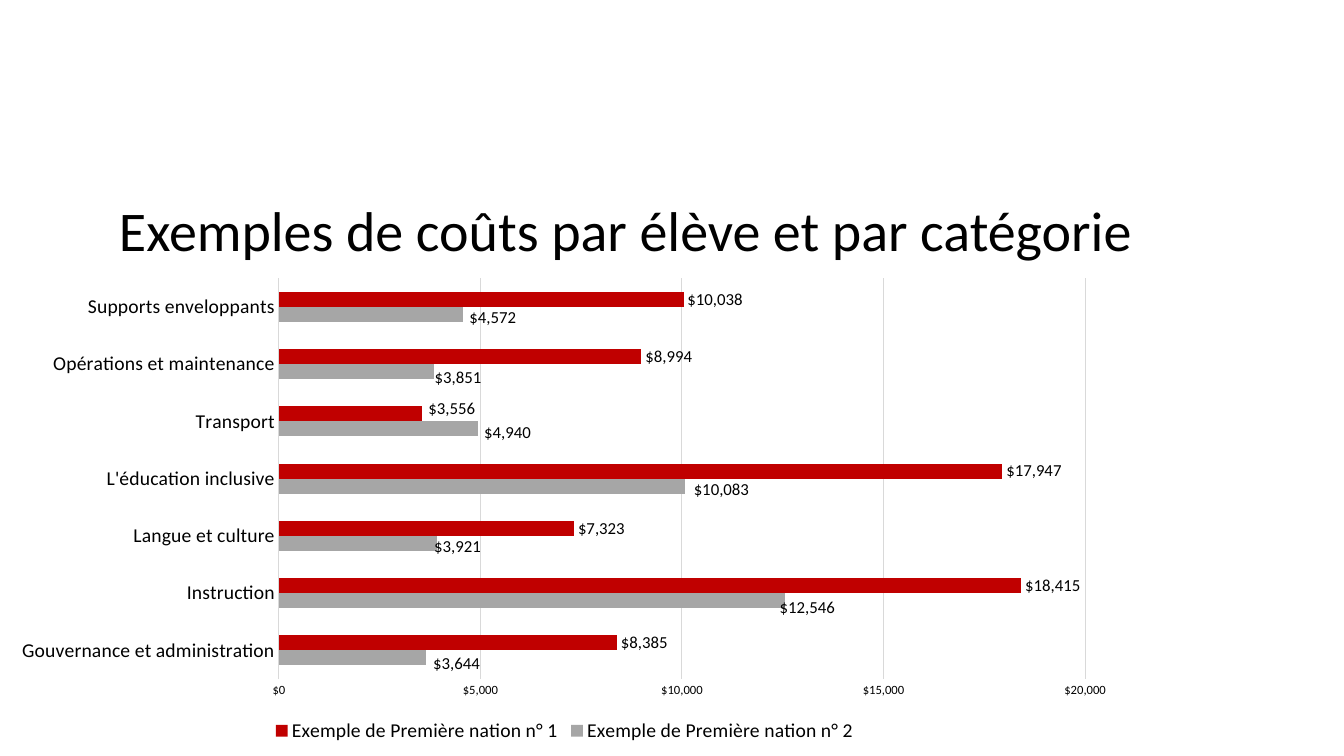
from lxml import etree
from pptx import Presentation
from pptx.chart.data import CategoryChartData
from pptx.dml.color import RGBColor
from pptx.enum import chart as ch, text as tx
from pptx.oxml.ns import qn
from pptx.util import Inches, Pt

TITLE = "Exemples de coûts par élève et par catégorie"
FONT, MONEY = "Calibri", '"$"#,##0'
HEX = {"text": "000000", "grid": "D9D9D9", "grey": "A6A6A6", "red": "C00000"}

# category, cost in nation 2, cost in nation 1
COSTS = [
    ("Gouvernance et administration", 3644, 8385),
    ("Instruction", 12546, 18415),
    ("Langue et culture", 3921, 7323),
    ("L'éducation inclusive", 10083, 17947),
    ("Transport", 4940, 3556),
    ("Opérations et maintenance", 3851, 8994),
    ("Supports enveloppants", 4572, 10038),
]
# name, colour, label shifts by point in thousandths of the chart's size
NATIONS = [
    ("Exemple de Première nation n° 2", "grey",
     {0: (3, 13), 1: (-8, 14), 2: (-6, 6), 3: (4, 7), 4: (2, 9), 5: (-3, 12), 6: (2, 7)}),
    ("Exemple de Première nation n° 1", "red", {4: (2, -10)}),
]
PLOT = {"x": 0.247, "y": 0.019, "w": 0.714, "h": 0.839}


def rgb(name):
    return RGBColor.from_string(HEX[name])


def style(font, size):
    font.name, font.size = FONT, Pt(size)
    font.color.rgb = rgb("text")


def rule(line):
    line.color.rgb = rgb("grid")
    line.width = Pt(0.75)


def layout(tags):
    """Build a manual chart layout from (tag, value) pairs."""
    box = etree.Element(qn("c:layout"))
    man = etree.SubElement(box, qn("c:manualLayout"))
    for tag, val in tags:
        etree.SubElement(man, qn("c:" + tag)).set("val", str(val))
    return box


def add_title(slide):
    title = slide.shapes.title
    title.left, title.top = Inches(1.08), Inches(1.89)
    title.width, title.height = Inches(11.1), Inches(0.77)
    frame = title.text_frame
    frame.text, frame.word_wrap = TITLE, True
    frame.vertical_anchor = tx.MSO_ANCHOR.TOP
    frame.auto_size = tx.MSO_AUTO_SIZE.SHAPE_TO_FIT_TEXT
    par = frame.paragraphs[0]
    par.alignment = tx.PP_ALIGN.LEFT
    style(par.font, 40)


def add_bars(slide):
    cats, *costs = zip(*COSTS)
    data = CategoryChartData(number_format=MONEY)
    data.categories = cats
    for (name, _, _), vals in zip(NATIONS, costs):
        data.add_series(name, vals)
    chart = slide.shapes.add_chart(
        ch.XL_CHART_TYPE.BAR_CLUSTERED, 0, Inches(2.67),
        Inches(11.2), Inches(4.74), data).chart
    chart.has_title = False
    style(chart.font, 10)
    chart.has_legend = True
    chart.legend.position = ch.XL_LEGEND_POSITION.BOTTOM
    chart.legend.include_in_layout = False
    style(chart.legend.font, 14)
    style_axes(chart)
    plot = chart.plots[0]
    plot.gap_width, plot.overlap, plot.vary_by_categories = 182, 0, False
    for series, (_, hue, shifts) in zip(plot.series, NATIONS):
        style_bars(series, hue, shifts)
    area = chart._chartSpace.find(".//" + qn("c:plotArea"))
    for old in area.findall(qn("c:layout")):
        area.remove(old)
    tags = [("layoutTarget", "inner"), ("xMode", "edge"), ("yMode", "edge")]
    area.insert(0, layout(tags + list(PLOT.items())))


def style_axes(chart):
    cat, val = chart.category_axis, chart.value_axis
    for axis, size in ((cat, 14), (val, 9)):
        axis.major_tick_mark = axis.minor_tick_mark = ch.XL_TICK_MARK.NONE
        style(axis.tick_labels.font, size)
    rule(cat.format.line)
    val.format.line.fill.background()
    val.minimum_scale, val.maximum_scale, val.major_unit = 0, 20000, 5000
    val.has_major_gridlines = True
    rule(val.major_gridlines.format.line)
    val.tick_labels.number_format = MONEY
    val.tick_labels.number_format_is_linked = False


def style_bars(series, hue, shifts):
    series.invert_if_negative = False
    series.format.fill.solid()
    series.format.fill.fore_color.rgb = rgb(hue)
    labels = series.data_labels
    labels.show_value = True
    labels.number_format, labels.number_format_is_linked = MONEY, False
    labels.position = ch.XL_LABEL_POSITION.OUTSIDE_END
    style(labels.font, 12)
    for idx in shifts:
        label = series.points[idx].data_label
        style(label.font, 12)
        label.position = ch.XL_LABEL_POSITION.OUTSIDE_END
    for node in labels._element.findall(qn("c:dLbl")):
        mark = node.find(qn("c:idx"))
        dx, dy = shifts[int(mark.get("val"))]
        mark.addnext(layout([("x", dx / 1000), ("y", dy / 1000)]))


def main():
    prs = Presentation()
    prs.slide_width, prs.slide_height = Inches(13.33), Inches(7.5)
    slide = prs.slides.add_slide(prs.slide_layouts[5])
    add_bars(slide)
    add_title(slide)
    prs.save("out.pptx")


if __name__ == "__main__":
    main()
